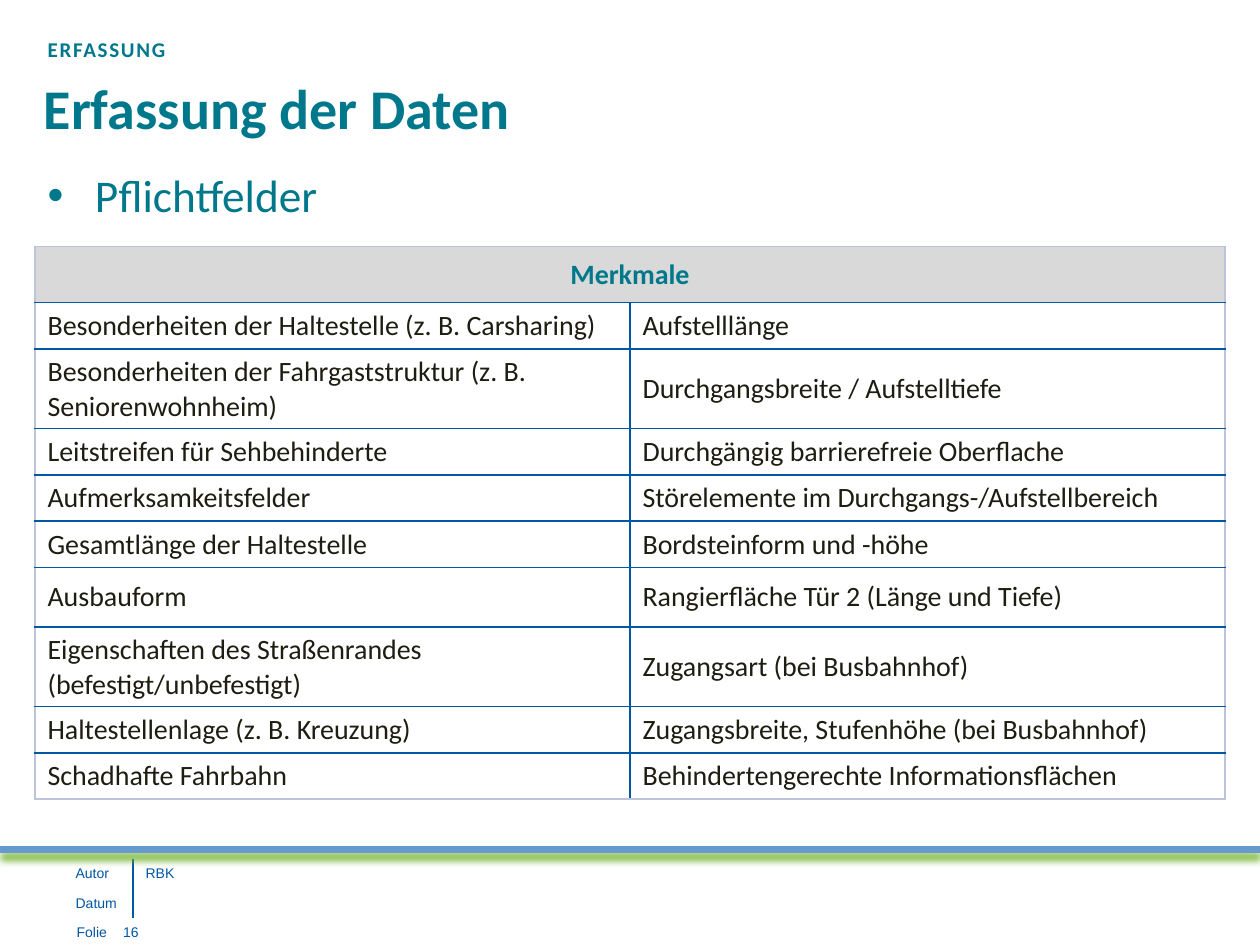
from lxml import etree
from pptx import Presentation
from pptx.dml.color import RGBColor
from pptx.enum.shapes import MSO_CONNECTOR
from pptx.enum.text import MSO_ANCHOR, MSO_AUTO_SIZE, PP_ALIGN
from pptx.oxml.ns import qn
from pptx.util import Pt

STRAIGHT = MSO_CONNECTOR.STRAIGHT
TOP, MIDDLE, BOTTOM = MSO_ANCHOR.TOP, MSO_ANCHOR.MIDDLE, MSO_ANCHOR.BOTTOM
LEFT, CENTER = PP_ALIGN.LEFT, PP_ALIGN.CENTER
NO_AUTOFIT = MSO_AUTO_SIZE.NONE

TEAL = RGBColor(0x00, 0x78, 0x8C)
BLUE = RGBColor(0x00, 0x57, 0xA3)
PALE_BLUE = RGBColor(0xBC, 0xC3, 0xDA)
BAR_BLUE = RGBColor(0x66, 0x99, 0xCC)
GREEN = RGBColor(0x6A, 0xB0, 0x23)
GREY = RGBColor(0xD9, 0xD9, 0xD9)
INK = RGBColor(0x1E, 0x1D, 0x12)

PAGE_WIDTH, PAGE_HEIGHT = 720, 540
TWO_CONTENT_LAYOUT = 3

KICKER_FONT = dict(name="Calibri", size=Pt(12), bold=True, color=TEAL)
TITLE_FONT = dict(name="Calibri", size=Pt(32), bold=True, color=TEAL)
LIST_FONT = dict(name="Calibri", size=Pt(25.9), bold=False, color=TEAL)
HEADER_FONT = dict(name="Calibri", size=Pt(16), bold=True, color=TEAL)
CELL_FONT = dict(name="Calibri", size=Pt(16), bold=False, color=INK)
FOOTER_FONT = dict(name="Arial", size=Pt(8), bold=False, color=BLUE)

FEATURES = [
    ("Besonderheiten der Haltestelle (z. B. Carsharing)", "Aufstelllänge"),
    ("Besonderheiten der Fahrgaststruktur (z. B. Seniorenwohnheim)",
     "Durchgangsbreite / Aufstelltiefe"),
    ("Leitstreifen für Sehbehinderte", "Durchgängig barrierefreie Oberflache"),
    ("Aufmerksamkeitsfelder", "Störelemente im Durchgangs-/Aufstellbereich"),
    ("Gesamtlänge der Haltestelle", "Bordsteinform und -höhe"),
    ("Ausbauform", "Rangierfläche Tür 2 (Länge und Tiefe)"),
    ("Eigenschaften des Straßenrandes (befestigt/unbefestigt)",
     "Zugangsart (bei Busbahnhof)"),
    ("Haltestellenlage (z. B. Kreuzung)",
     "Zugangsbreite, Stufenhöhe (bei Busbahnhof)"),
    ("Schadhafte Fahrbahn", "Behindertengerechte Informationsflächen"),
]
FEATURE_HEIGHTS = [32, 26, 42, 26, 26, 26, 34, 26, 26, 26]
FOOTER_ROWS = [("Autor", "RBK"), ("Datum", "")]


def points(*lengths):
    return [Pt(length) for length in lengths]


def add_element(parent, tag, **attributes):
    values = {name: str(value) for name, value in attributes.items()}
    return etree.SubElement(parent, qn(tag), values)


def write(para, text, font):
    span = para.add_run()
    span.text = text
    for name, value in font.items():
        if name == "color":
            span.font.color.rgb = value
        else:
            setattr(span.font, name, value)
    return span


def fill_placeholder(shape, box, text, font, anchor):
    shape.left, shape.top, shape.width, shape.height = points(*box)
    frame = shape.text_frame
    frame.auto_size = NO_AUTOFIT
    frame.vertical_anchor = anchor
    para = frame.paragraphs[0]
    para.alignment = LEFT
    para.space_before = Pt(0)
    return para, write(para, text, font)


def fill_heading(page, box):
    """Kicker, title and list, stacked in the box."""
    left, top, width = box
    kicker, title, bullets = page.placeholders[1], page.shapes.title, page.placeholders[2]

    para, span = fill_placeholder(
        kicker, (left, top, width, 16), "ERFASSUNG", KICKER_FONT, TOP)
    kicker.text_frame.margin_bottom = 0
    span.font._element.set("spc", "100")
    indent = para._p.get_or_add_pPr()
    indent.set("marL", "0")
    indent.set("indent", "0")
    add_element(indent, "a:buNone")

    fill_placeholder(title, (left, top + 29.5, width, 30), "Erfassung der Daten",
                     TITLE_FONT, MIDDLE)
    title.text_frame.margin_left = Pt(5)

    para, _ = fill_placeholder(
        bullets, (left, top + 75, 333, 33), "Pflichtfelder", LIST_FONT, TOP)
    indent = para._p.get_or_add_pPr()
    indent.set("marL", str(Pt(27)))
    indent.set("indent", str(-Pt(27)))
    add_element(indent, "a:buFont", typeface="Arial")
    add_element(indent, "a:buChar", char="•")


def set_borders(cell, colors):
    """Draw a 1 pt line on each side (L, R, T, B) that has a colour."""
    properties = cell._tc.get_or_add_tcPr()
    for side in "LRTB":
        line = add_element(properties, f"a:ln{side}", w=Pt(1))
        if side in colors:
            fill = add_element(line, "a:solidFill")
            add_element(fill, "a:srgbClr", val=colors[side])
        else:
            add_element(line, "a:noFill")


def add_plain_table(page, box, widths, heights):
    frame = page.shapes.add_table(len(heights), len(widths), *points(*box))
    table = frame.table
    table.first_row = table.horz_banding = False
    for column, width in zip(table.columns, widths):
        column.width = Pt(width)
    for row, height in zip(table.rows, heights):
        row.height = Pt(height)
    return table


def add_feature_table(page, box):
    column_width = box[2] / 2
    table = add_plain_table(page, box, [column_width] * 2, FEATURE_HEIGHTS)
    last_row = len(FEATURES)
    for row, texts in enumerate([("Merkmale", "")] + FEATURES):
        is_header = row == 0
        for column, text in enumerate(texts):
            cell = table.cell(row, column)
            set_borders(cell, {
                "L": PALE_BLUE if column == 0 else BLUE,
                "R": PALE_BLUE if column == 1 or is_header else BLUE,
                "T": PALE_BLUE if is_header else BLUE,
                "B": PALE_BLUE if row == last_row else BLUE,
            })
            cell.vertical_anchor = MIDDLE
            if is_header:
                cell.fill.solid()
                cell.fill.fore_color.rgb = GREY
            else:
                cell.fill.background()
            if text:
                para = cell.text_frame.paragraphs[0]
                para.alignment = CENTER if is_header else LEFT
                write(para, text, HEADER_FONT if is_header else CELL_FONT)
    table.cell(0, 0).merge(table.cell(0, 1))


def add_footer_bar(page, box):
    left, top, width = box
    bar = page.shapes.add_connector(STRAIGHT, *points(left, top, left + width, top))
    bar.line.color.rgb = BAR_BLUE
    bar.line.width = Pt(4)
    effects = add_element(bar._element.spPr, "a:effectLst")
    shadow = add_element(effects, "a:outerShdw", blurRad=Pt(4), dist=Pt(4),
                         dir=90 * 60000, algn="t", rotWithShape=0)
    add_element(shadow, "a:srgbClr", val=GREEN)


def add_footer(page, box):
    left, top, width, height = box
    table = add_plain_table(page, (left, top, width, 29), [40, width - 40], [14.4] * 2)
    for row, texts in enumerate(FOOTER_ROWS):
        for column, text in enumerate(texts):
            cell = table.cell(row, column)
            set_borders(cell, {"L" if column else "R": BLUE})
            cell.fill.background()
            cell.vertical_anchor = BOTTOM
            para = cell.text_frame.paragraphs[0]
            if text:
                write(para, text, FOOTER_FONT)
            else:
                add_element(para._p, "a:endParaRPr", sz=800)

    number = page.shapes.add_textbox(*points(left + 0.7, top + height - 29, 85, 29))
    frame = number.text_frame
    frame.word_wrap = True
    frame.vertical_anchor = MIDDLE
    para = frame.paragraphs[0]
    tabs = add_element(para._p.get_or_add_pPr(), "a:tabLst")
    add_element(tabs, "a:tab", pos=Pt(26.5), algn="l")
    write(para, "Folie\t16", FOOTER_FONT)


def main():
    deck = Presentation()
    deck.slide_width, deck.slide_height = points(PAGE_WIDTH, PAGE_HEIGHT)
    page = deck.slides.add_slide(deck.slide_layouts[TWO_CONTENT_LAYOUT])
    add_footer(page, (36, 491, 170, 56))
    add_footer_bar(page, (0, 485.3, PAGE_WIDTH))
    fill_heading(page, (20, 17, 595))
    add_feature_table(page, (20, 141, 680, sum(FEATURE_HEIGHTS)))
    deck.save("out.pptx")


if __name__ == "__main__":
    main()
